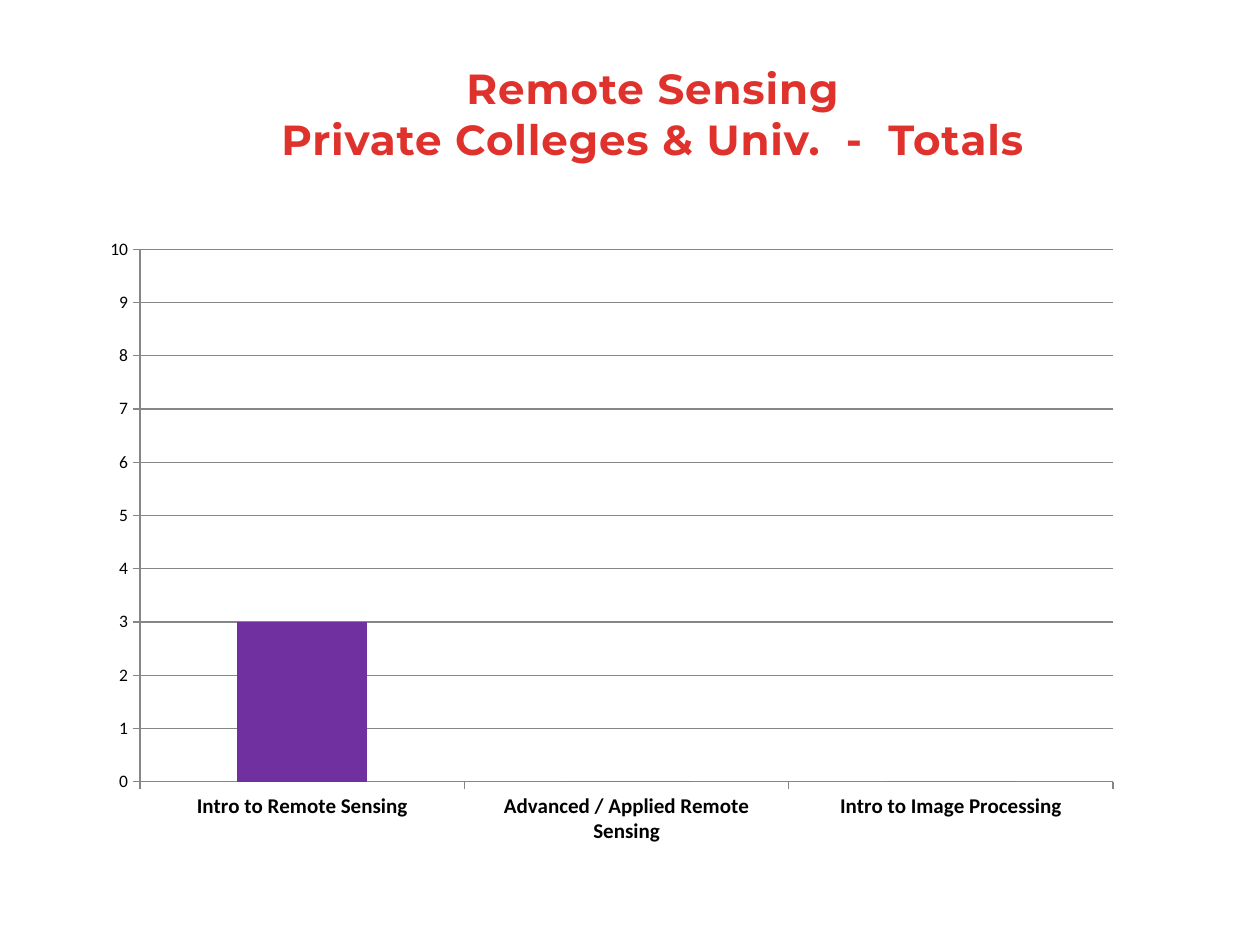
from pptx import Presentation
from pptx.chart.data import CategoryChartData
from pptx.dml.color import RGBColor
from pptx.enum.chart import XL_CHART_TYPE as ChartType, XL_TICK_MARK as Tick
from pptx.enum.text import MSO_AUTO_SIZE as AutoSize, PP_ALIGN as Align
from pptx.util import Inches, Pt

RED = RGBColor(0xE0, 0x32, 0x2D)
PURPLE = RGBColor(0x70, 0x30, 0xA0)
GRAY = RGBColor(0x86, 0x86, 0x86)
BLACK = RGBColor(0, 0, 0)

TITLE_BOX = [Inches(n) for n in (1.54, 0.45, 7.28, 0.91)]
CHART_BOX = [Inches(n) for n in (0.71, 1.8, 8.29, 5)]
TITLE = ("Remote Sensing", "Private Colleges & Univ.  -  Totals")
COURSES = {
    "Intro to Remote Sensing": 3,
    "Advanced / Applied Remote Sensing": 0,
    "Intro to Image Processing": 0,
}


def add_title(slide, box, lines):
    tf = slide.shapes.add_textbox(*box).text_frame
    tf.word_wrap = True
    tf.auto_size = AutoSize.SHAPE_TO_FIT_TEXT
    for i, line in enumerate(lines):
        p = tf.add_paragraph() if i else tf.paragraphs[0]
        p.alignment = Align.CENTER
        r = p.add_run()
        r.text = line
        font = r.font
        font.name, font.size, font.bold = "Montserrat", Pt(24), True
        font.color.rgb = RED
        r._r.get_or_add_rPr().set("spc", "50")


def style_line(line):
    line.color.rgb = GRAY
    line.width = Pt(0.75)


def add_course_chart(slide, box, courses):
    data = CategoryChartData()
    data.categories = list(courses)
    data.add_series("Series 1", list(courses.values()))
    chart = slide.shapes.add_chart(ChartType.COLUMN_CLUSTERED, *box, data).chart
    chart.has_legend = chart.has_title = False
    chart.font.name, chart.font.size = "Calibri", Pt(10)
    chart.font.color.rgb = BLACK

    plot = chart.plots[0]
    plot.gap_width = 150
    plot.vary_by_categories = False
    fill = plot.series[0].format.fill
    fill.solid()
    fill.fore_color.rgb = PURPLE

    cats, values = chart.category_axis, chart.value_axis
    for axis in (cats, values):
        axis.major_tick_mark, axis.minor_tick_mark = Tick.OUTSIDE, Tick.NONE
        style_line(axis.format.line)
    label = cats.tick_labels.font
    label.size, label.bold = Pt(12), True
    label.color.rgb = BLACK
    values.minimum_scale, values.maximum_scale, values.major_unit = 0, 10, 1
    values.has_major_gridlines = True
    style_line(values.major_gridlines.format.line)


def main():
    prs = Presentation()
    prs.slide_width, prs.slide_height = Inches(10), Inches(7.5)
    slide = prs.slides.add_slide(prs.slide_layouts[6])
    add_course_chart(slide, CHART_BOX, COURSES)
    add_title(slide, TITLE_BOX, TITLE)
    prs.save("out.pptx")


if __name__ == "__main__":
    main()
